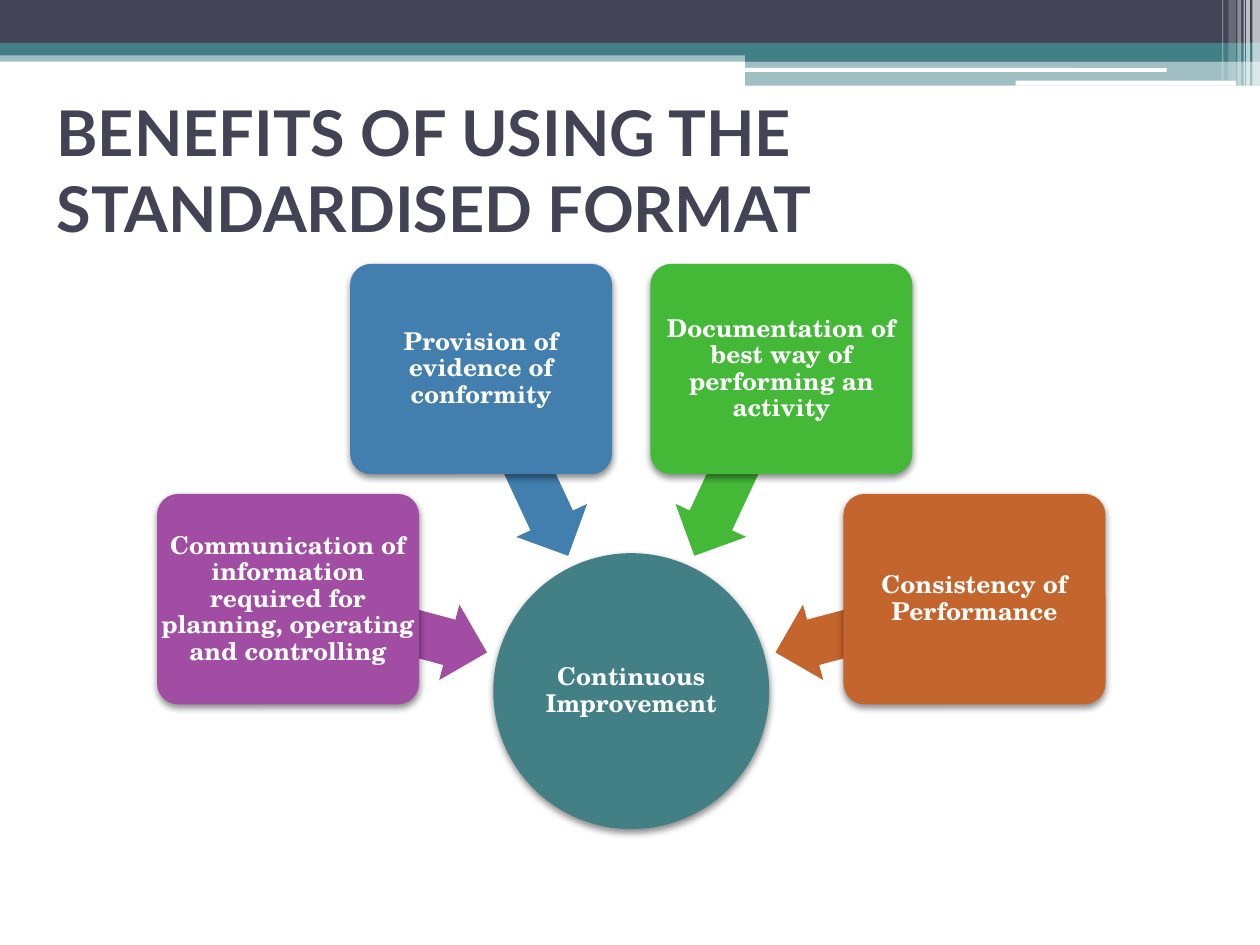
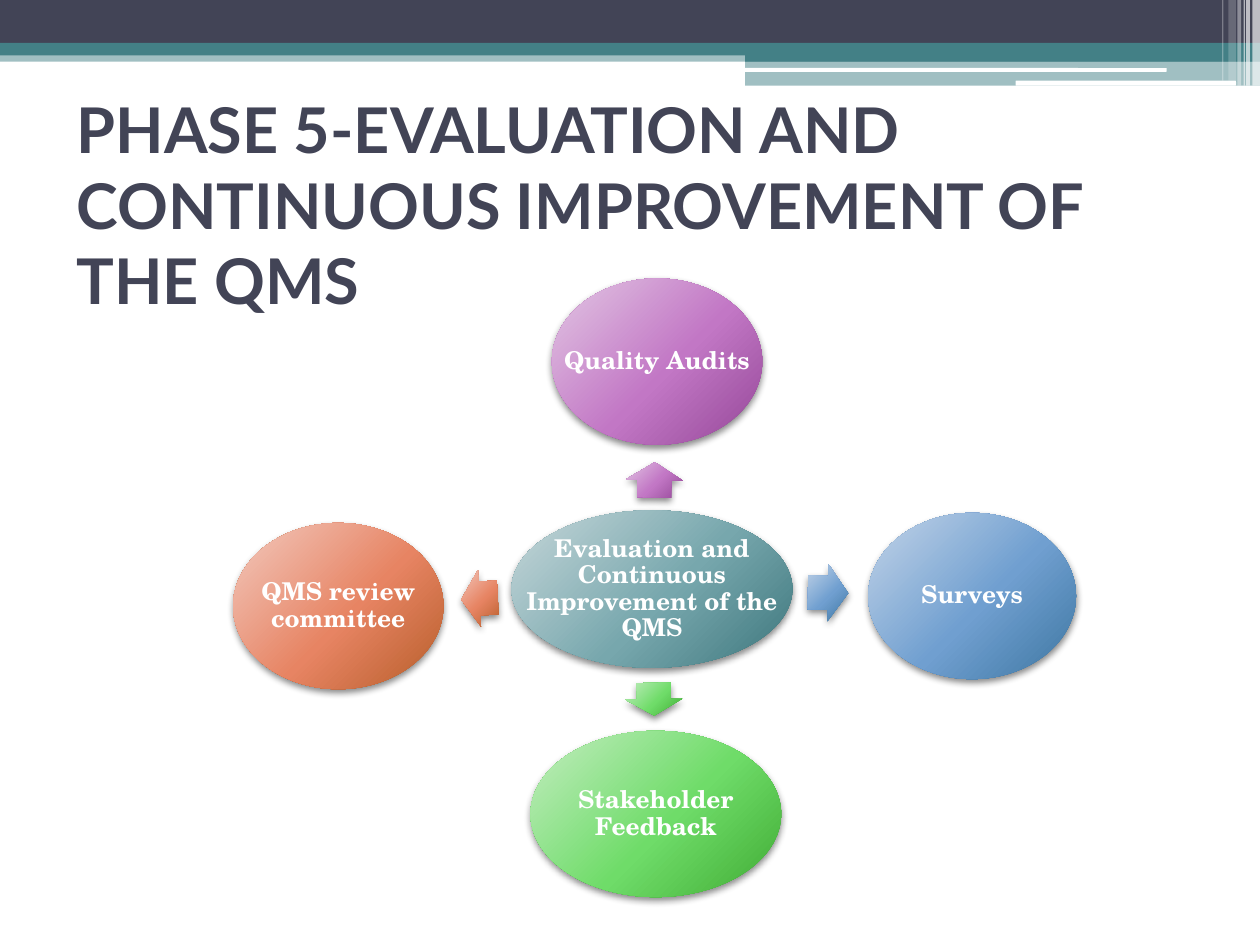
"""Build two quality management slides: format benefits and phase 5 evaluation."""
from math import atan2, cos, degrees, radians, sin

from pptx import Presentation
from pptx import util as u
from pptx.dml.color import RGBColor
from pptx.enum import shapes, text
from pptx.oxml import parse_xml
from pptx.oxml.ns import nsdecls, qn

COLUMNS, ROWS = 100, 75
KIND = shapes.MSO_SHAPE
COLORS = {
    "ink": "424456", "teal": "438086", "white": "FFFFFF", "shadow": "000000",
    "purple": "A04DA3", "blue": "427FAE", "green": "44B938", "orange": "C4652D",
}
GRADIENTS = {
    "teal": ("C7D7DA", "77A7AD", "3E777D"),
    "purple": ("E2C6E3", "C277C5", "954898"),
    "blue": ("C3D4E8", "709FD0", "3E77A2"),
    "green": ("C3EDC1", "6FDC69", "40AC34"),
    "orange": ("F2C9BF", "E78463", "B75E2A"),
}
BANDS = [
    (0, 4, 100, 0.9, "teal", 50),
    (0, 0, 100, 3.4, "ink", 100),
    (0, 3.4, 100, 1, "teal", 100),
    (59.15, 3.9, 40.85, 1, "teal", 100),
    (59.15, 4.85, 40.85, 1.95, "teal", 50),
]
WHITE_BARS = [(59.1, 5.4, 33.5, 0.3), (80.6, 6.4, 17.5, 0.4)]
STRIPES = [
    (99.4, 0.6, 6.8, 65), (98.9, 0.3, 6.8, 65), (98.7, 0.1, 6.8, 60),
    (98.2, 0.3, 6.8, 40), (97.5, 0.6, 6.4, 20), (97, 0.1, 6.4, 30),
]


class Painter:
    """Holds the deck, its shared style and the current slide."""

    def __init__(self):
        """Start an empty deck measured on the grid."""
        self.deck = Presentation()
        self.deck.slide_width = u.Inches(10)
        self.deck.slide_height = u.Inches(7.5)
        self.page = None

    def frame(self, left, top, width, height):
        """Turn columns and rows into slide lengths."""
        column = self.deck.slide_width / COLUMNS
        row = self.deck.slide_height / ROWS
        return [u.Emu(round(length)) for length in
                (left * column, top * row, width * column, height * row)]

    def shape(self, kind, place, color, opacity=100, adjust=(), turn=0):
        """Draw a flat preset shape without outline."""
        shape = self.page.shapes.add_shape(kind, *self.frame(*place))
        shape.shadow.inherit = False
        shape.line.fill.background()
        shape.fill.solid()
        shape.fill.fore_color.rgb = RGBColor.from_string(COLORS[color])
        shape.rotation = turn
        for index, value in enumerate(adjust):
            shape.adjustments[index] = value
        if opacity < 100:
            tint = shape.element.spPr.find(qn("a:solidFill"))[0]
            tint.append(parse_xml(f'<a:alpha {nsdecls("a")} val="{opacity * 1000}"/>'))
        return shape

    def shade(self, shape):
        """Give a shape a soft shadow below it."""
        shape.element.spPr.find(qn("a:effectLst")).append(parse_xml(
            f'<a:outerShdw {nsdecls("a")} blurRad="{u.Pt(4)}" dist="{u.Pt(2)}" '
            f'dir="5400000" rotWithShape="0"><a:srgbClr val="{COLORS["shadow"]}">'
            '<a:alpha val="45000"/></a:srgbClr></a:outerShdw>'))

    def blend(self, shape, color):
        """Replace the flat fill by a gradient from the upper left."""
        stops = "".join(
            f'<a:gs pos="{share * 1000}"><a:srgbClr val="{tone}"/></a:gs>'
            for share, tone in zip((0, 55, 100), GRADIENTS[color]))
        properties = shape.element.spPr
        properties.replace(properties.find(qn("a:solidFill")), parse_xml(
            f'<a:gradFill {nsdecls("a")} rotWithShape="0"><a:gsLst>{stops}</a:gsLst>'
            '<a:path path="circle"><a:fillToRect l="-40000" t="-90000" '
            'r="140000" b="190000"/></a:path></a:gradFill>'))

    def caption(self, words, place, size, font, color, inset):
        """Add a wrapped, vertically centred bold text box."""
        box = self.page.shapes.add_textbox(*self.frame(*place)).text_frame
        box.word_wrap = True
        box.vertical_anchor = text.MSO_ANCHOR.MIDDLE
        box.margin_left = box.margin_right = u.Inches(inset)
        box.margin_top = box.margin_bottom = u.Inches(inset / 2)
        para = box.paragraphs[0]
        para.text = words
        para.font.size = u.Pt(size)
        para.font.name = font
        para.font.bold = True
        para.font.color.rgb = RGBColor.from_string(COLORS[color])
        return para

    def label(self, words, place):
        """Set the centred white text of a diagram part."""
        para = self.caption(words, place, 14, "TeX Gyre Schola", "white", 0.03)
        para.alignment = text.PP_ALIGN.CENTER
        para.line_spacing = 0.9

    def node(self, kind, center, size, color, words, adjust=(), blended=False):
        """Draw a shaded, captioned diagram part around its centre."""
        place = around(center, size)
        shape = self.shape(kind, place, color, adjust=adjust)
        self.shade(shape)
        if blended:
            self.blend(shape, color)
        self.label(words, place)

    def arrow(self, kind, center, size, color, turn, blended=False):
        """Draw a turned block arrow around its centre."""
        shape = self.shape(kind, around(center, size), color,
                           adjust=(0.6, 0.5), turn=turn)
        if blended:
            self.shade(shape)
            self.blend(shape, color)

    def start(self, title, place):
        """Open a slide with its bands and title."""
        self.page = self.deck.slides.add_slide(self.deck.slide_layouts[6])
        for *band, color, opacity in BANDS:
            self.shape(KIND.RECTANGLE, band, color, opacity)
        for bar in WHITE_BARS:
            self.shape(KIND.ROUNDED_RECTANGLE, bar, "white")
        for left, width, height, opacity in STRIPES:
            self.shape(KIND.RECTANGLE, (left, 0, width, height), "white", opacity)
        self.caption(title, place, 36, "Lato", "ink", 0.1)


def around(center, size):
    """Return the box of a size around a centre."""
    return (center[0] - size[0] / 2, center[1] - size[1] / 2, *size)


def orbit(center, radius, angle):
    """Return the point at a distance and clockwise angle from a centre."""
    return (center[0] + radius * cos(radians(angle)),
            center[1] + radius * sin(radians(angle)))


def draw_benefits(painter):
    """Four benefits pointing at continuous improvement."""
    painter.start("BENEFITS OF USING THE STANDARDISED FORMAT", (3.5, 7.6, 96.5, 11.7))
    hub = (50.1, 54.85)
    painter.node(KIND.OVAL, hub, (21.9, 21.9), "teal", "Continuous Improvement")
    benefits = [
        ("purple", "Communication of information required for planning, "
                   "operating and controlling"),
        ("blue", "Provision of evidence of conformity"),
        ("green", "Documentation of best way of performing an activity"),
        ("orange", "Consistency of Performance"),
    ]
    for index, (color, words) in enumerate(benefits):
        angle = 195 + 50 * index
        painter.arrow(KIND.LEFT_ARROW, orbit(hub, 20, angle), (16.3, 6.2), color, angle)
        painter.node(KIND.ROUNDED_RECTANGLE, orbit(hub, 28.2, angle), (20.8, 16.7),
                     color, words, adjust=(0.1,))


def draw_evaluation(painter):
    """Four sources of evaluation around the quality management system."""
    painter.start("PHASE 5-EVALUATION AND CONTINUOUS IMPROVEMENT OF THE QMS",
                  (5.1, 9.9, 90, 12.6))
    hub = (51.75, 46.75)
    painter.node(KIND.OVAL, hub, (22.3, 12.5), "teal",
                 "Evaluation and Continuous Improvement of the QMS", blended=True)
    sources = [
        ("purple", "Quality Audits", (52.15, 28.7), 16.7, 0.48, 2.8),
        ("blue", "Surveys", (77.15, 47.3), 16.5, 0.55, 3.2),
        ("green", "Stakeholder Feedback", (52.05, 64.6), 19.9, 0.49, 2.6),
        ("orange", "QMS review committee", (26.85, 48.1), 16.7, 0.55, 2.9),
    ]
    for color, words, center, width, share, length in sources:
        across, down = center[0] - hub[0], center[1] - hub[1]
        middle = (hub[0] + share * across, hub[1] + share * down)
        painter.arrow(KIND.RIGHT_ARROW, middle, (length, 4.5), color,
                      degrees(atan2(down, across)) % 360, blended=True)
        painter.node(KIND.OVAL, center, (width, 13.2), color, words, blended=True)


def main():
    """Draw both slides and save the deck."""
    painter = Painter()
    draw_benefits(painter)
    draw_evaluation(painter)
    painter.deck.save("out.pptx")


if __name__ == "__main__":
    main()
